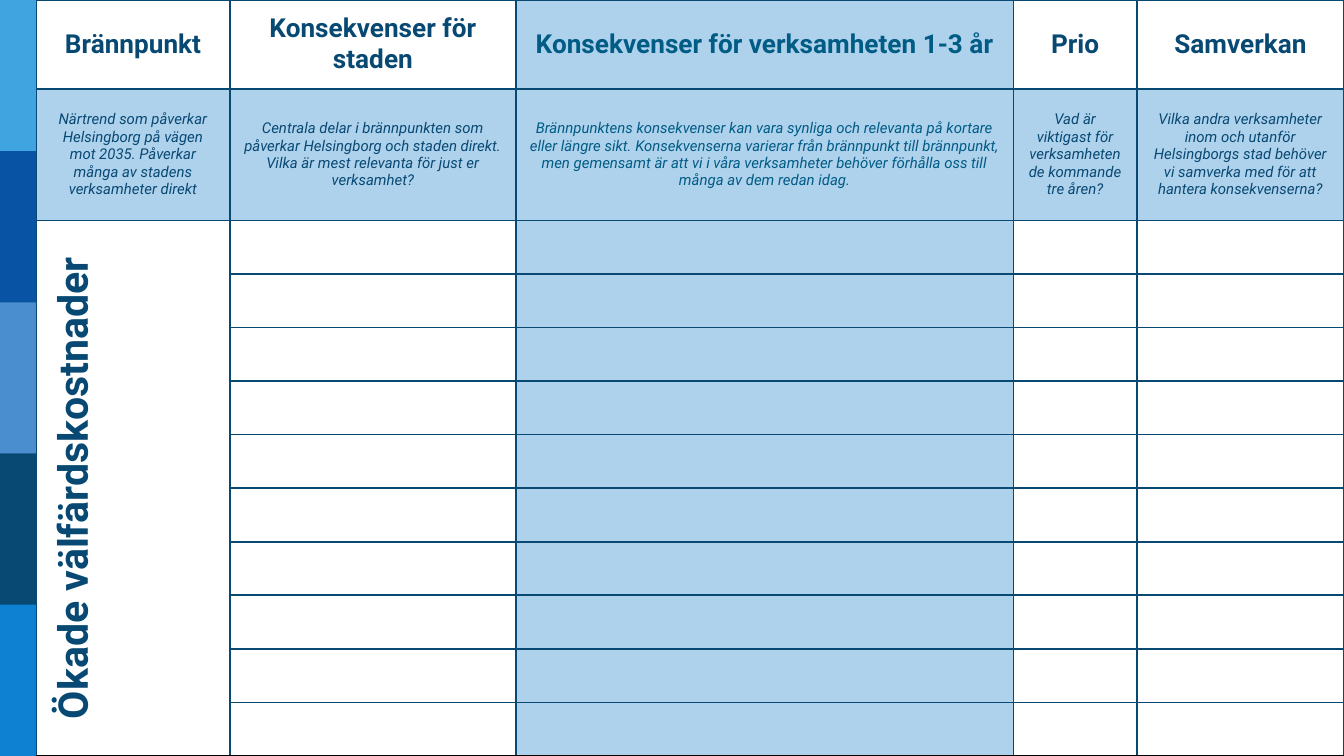
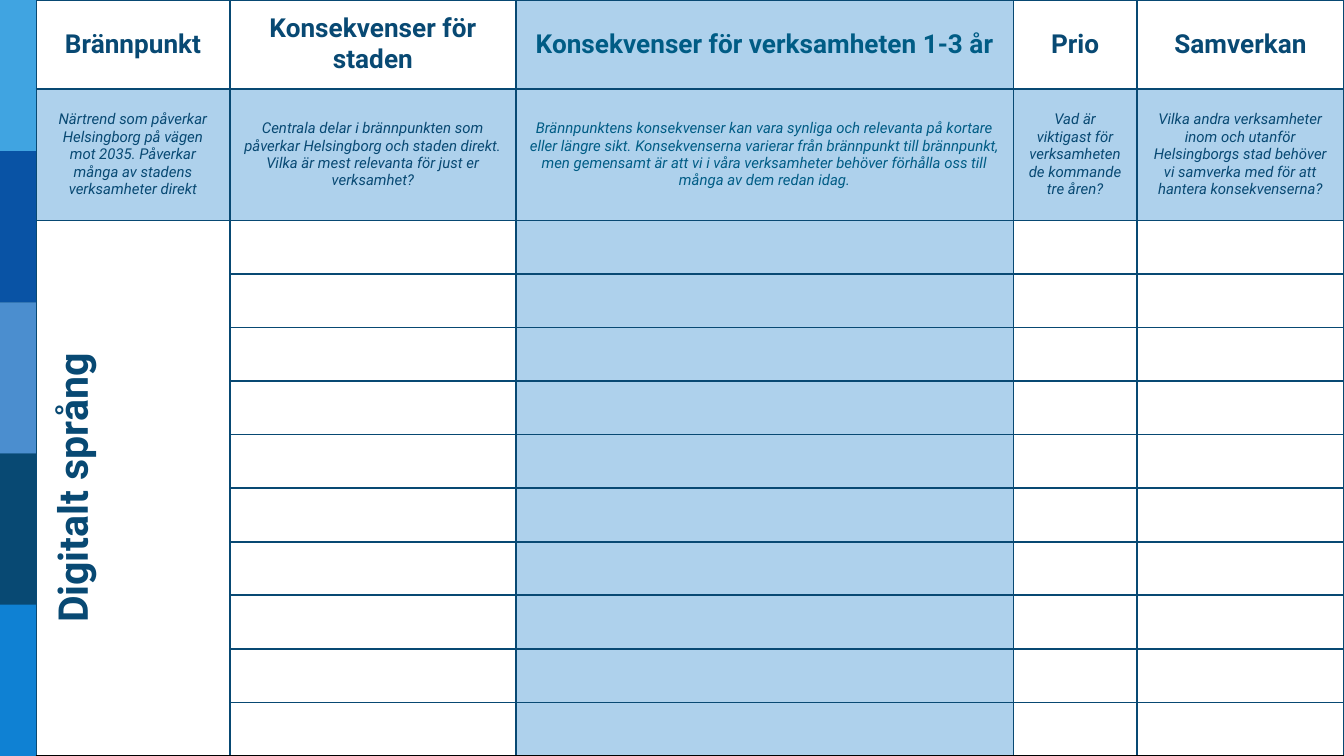
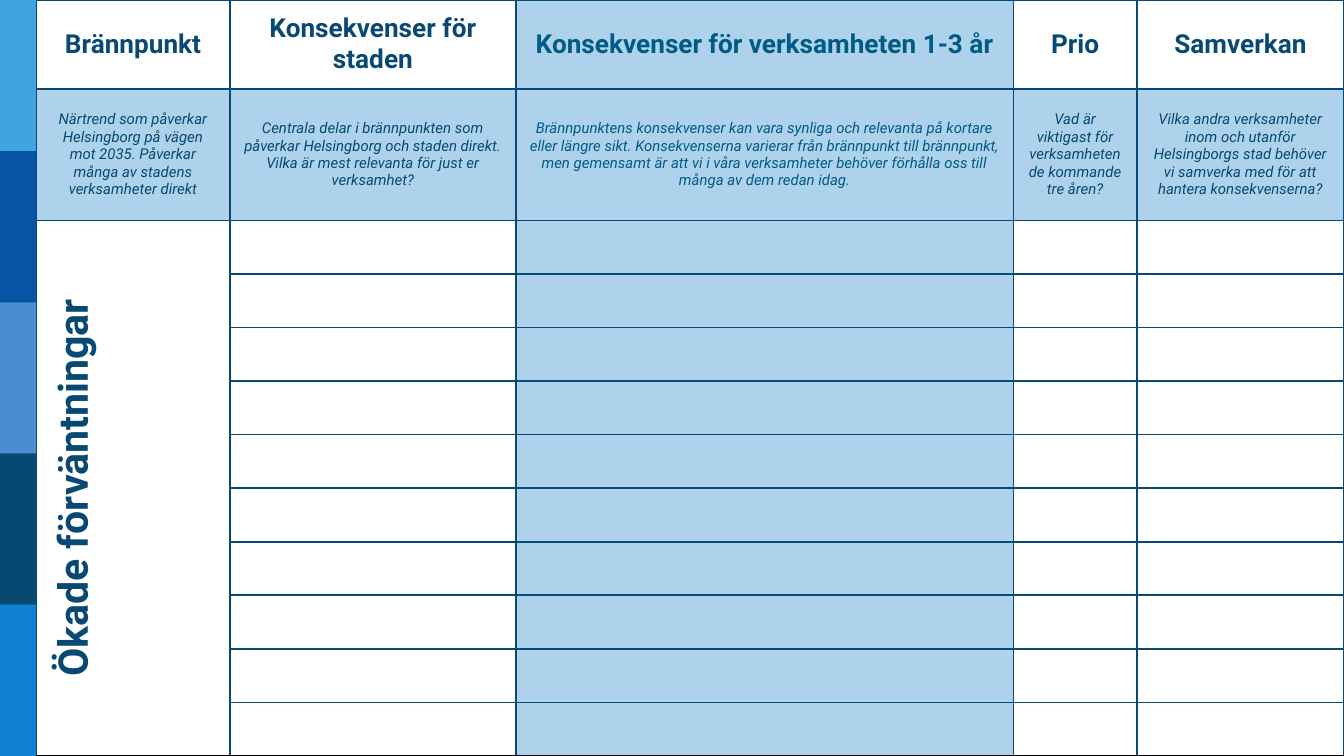
from dataclasses import dataclass

from lxml.etree import SubElement
from pptx import Presentation
from pptx.dml.color import RGBColor
from pptx.enum.shapes import MSO_SHAPE
from pptx.enum.text import MSO_ANCHOR, PP_ALIGN
from pptx.oxml.ns import qn
from pptx.util import Inches, Pt


@dataclass(frozen=True)
class Theme:
    font: str = "Roboto"
    navy: str = "084973"
    teal: str = "005C85"
    pale: str = "AED1EC"
    white: str = "FFFFFF"
    black: str = "000000"
    stripes: tuple = ("40A4E1", "0953A5", "4B8ECF", "084973", "0F81D3")
    heading_size: int = 14
    guide_size: int = 8
    focus_size: int = 22
    border_width: int = 1


# Layout, in inches
STRIPE_WIDTH = 0.27
COLUMN_WIDTHS = (1.44, 2.13, 3.7, 0.92, 1.54)
HEADING_HEIGHT, GUIDE_HEIGHT = 0.66, 0.98
CELL_MARGIN = 0.1
ANSWER_ROWS = 10
FIRST_ANSWER = 2
LAST_ROW = FIRST_ANSWER + ANSWER_ROWS - 1
KEY_COLUMN = 2

# Wording
HEADINGS = (
    "Brännpunkt",
    "Konsekvenser för staden",
    "Konsekvenser för verksamheten 1-3 år",
    "Prio",
    "Samverkan",
)
GUIDES = (
    "Närtrend som påverkar Helsingborg på vägen mot 2035. "
    "Påverkar många av stadens verksamheter direkt",
    "Centrala delar i brännpunkten som påverkar Helsingborg och staden direkt. "
    "Vilka är mest relevanta för just er verksamhet?",
    "Brännpunktens konsekvenser kan vara synliga och relevanta på kortare eller "
    "längre sikt. Konsekvenserna varierar från brännpunkt till brännpunkt, men "
    "gemensamt är att vi i våra verksamheter behöver förhålla oss till många av "
    "dem redan idag.",
    "Vad är viktigast för verksamheten de kommande tre åren?",
    "Vilka andra verksamheter inom och utanför Helsingborgs stad behöver vi "
    "samverka med för att hantera konsekvenserna?",
)
FOCUS_POINTS = ("Ökade välfärdskostnader", "Digitalt språng", "Ökade förväntningar")


class Worksheet:
    """Holds the theme and the current slide."""

    def __init__(self, deck, theme):
        self.deck = deck
        self.theme = theme
        self.slide = None

    def new_slide(self):
        self.slide = self.deck.slides.add_slide(self.deck.slide_layouts[6])
        self.paint(self.slide.background.fill, self.theme.navy)

    def paint(self, fill, color):
        fill.solid()
        fill.fore_color.rgb = RGBColor.from_string(color)

    def stripes(self):
        height = self.deck.slide_height // len(self.theme.stripes)
        for index, color in enumerate(self.theme.stripes):
            stripe = self.slide.shapes.add_shape(
                MSO_SHAPE.RECTANGLE, 0, index * height, Inches(STRIPE_WIDTH), height)
            stripe.shadow.inherit = False
            stripe.line.fill.background()
            self.paint(stripe.fill, color)

    def borders(self, cell, bottom_color):
        properties = cell._tc.get_or_add_tcPr()
        navy = self.theme.navy
        sides = {"a:lnL": navy, "a:lnR": navy, "a:lnT": navy, "a:lnB": bottom_color}
        for side, color in sides.items():
            line = SubElement(properties, qn(side), w=str(Pt(self.theme.border_width)))
            SubElement(SubElement(line, qn("a:solidFill")), qn("a:srgbClr"), val=color)

    def cell_text(self, cell, text, size, color, bold=False, italic=False):
        cell.text_frame.text = text
        para = cell.text_frame.paragraphs[0]
        para.alignment = PP_ALIGN.CENTER
        for span in para.runs:
            font = span.font
            font.name, font.size = self.theme.font, Pt(size)
            font.bold, font.italic = bold, italic
            font.color.rgb = RGBColor.from_string(color)

    def style_cell(self, cell, row, column):
        theme = self.theme
        cell.vertical_anchor = MSO_ANCHOR.MIDDLE
        cell.margin_left = cell.margin_right = Inches(CELL_MARGIN)
        cell.margin_top = cell.margin_bottom = Inches(CELL_MARGIN)
        at_bottom = row == LAST_ROW or (row == FIRST_ANSWER and column == 0)
        self.borders(cell, theme.black if at_bottom else theme.navy)
        shaded = column == KEY_COLUMN or row == 1
        self.paint(cell.fill, theme.pale if shaded else theme.white)

    def table(self, focus_point):
        theme = self.theme
        height = self.deck.slide_height
        table = self.slide.shapes.add_table(
            LAST_ROW + 1, len(COLUMN_WIDTHS), Inches(STRIPE_WIDTH), 0,
            Inches(sum(COLUMN_WIDTHS)), height).table
        table.first_row = table.horz_banding = False

        # Grid: the answer rows share the height below the two top rows
        for column, width in zip(table.columns, COLUMN_WIDTHS):
            column.width = Inches(width)
        top_heights = [Inches(HEADING_HEIGHT), Inches(GUIDE_HEIGHT)]
        answer_height = (height - sum(top_heights)) // ANSWER_ROWS
        for row, row_height in zip(table.rows, top_heights + [answer_height] * ANSWER_ROWS):
            row.height = row_height

        # Cell styling, with small type so that empty rows keep their height
        for row in range(LAST_ROW + 1):
            for column in range(len(COLUMN_WIDTHS)):
                cell = table.cell(row, column)
                self.style_cell(cell, row, column)
                if row >= FIRST_ANSWER and column > 0:
                    SubElement(cell.text_frame.paragraphs[0]._p, qn("a:endParaRPr"),
                               sz=str(theme.guide_size * 100))

        # Headings and guiding texts
        for column, (heading, guide) in enumerate(zip(HEADINGS, GUIDES)):
            color = theme.teal if column == KEY_COLUMN else theme.navy
            self.cell_text(table.cell(0, column), heading, theme.heading_size, color, bold=True)
            self.cell_text(table.cell(1, column), guide, theme.guide_size, color, italic=True)

        # Focus point, read from bottom to top
        focus = table.cell(FIRST_ANSWER, 0)
        focus.merge(table.cell(LAST_ROW, 0))
        self.cell_text(focus, focus_point, theme.focus_size, theme.navy, bold=True)
        focus._tc.get_or_add_tcPr().set("vert", "vert270")


def main():
    deck = Presentation()
    deck.slide_width = Inches(10)
    deck.slide_height = deck.slide_width * 9 // 16
    worksheet = Worksheet(deck, Theme())
    for focus_point in FOCUS_POINTS:
        worksheet.new_slide()
        worksheet.stripes()
        worksheet.table(focus_point)
    deck.save("out.pptx")


if __name__ == "__main__":
    main()
